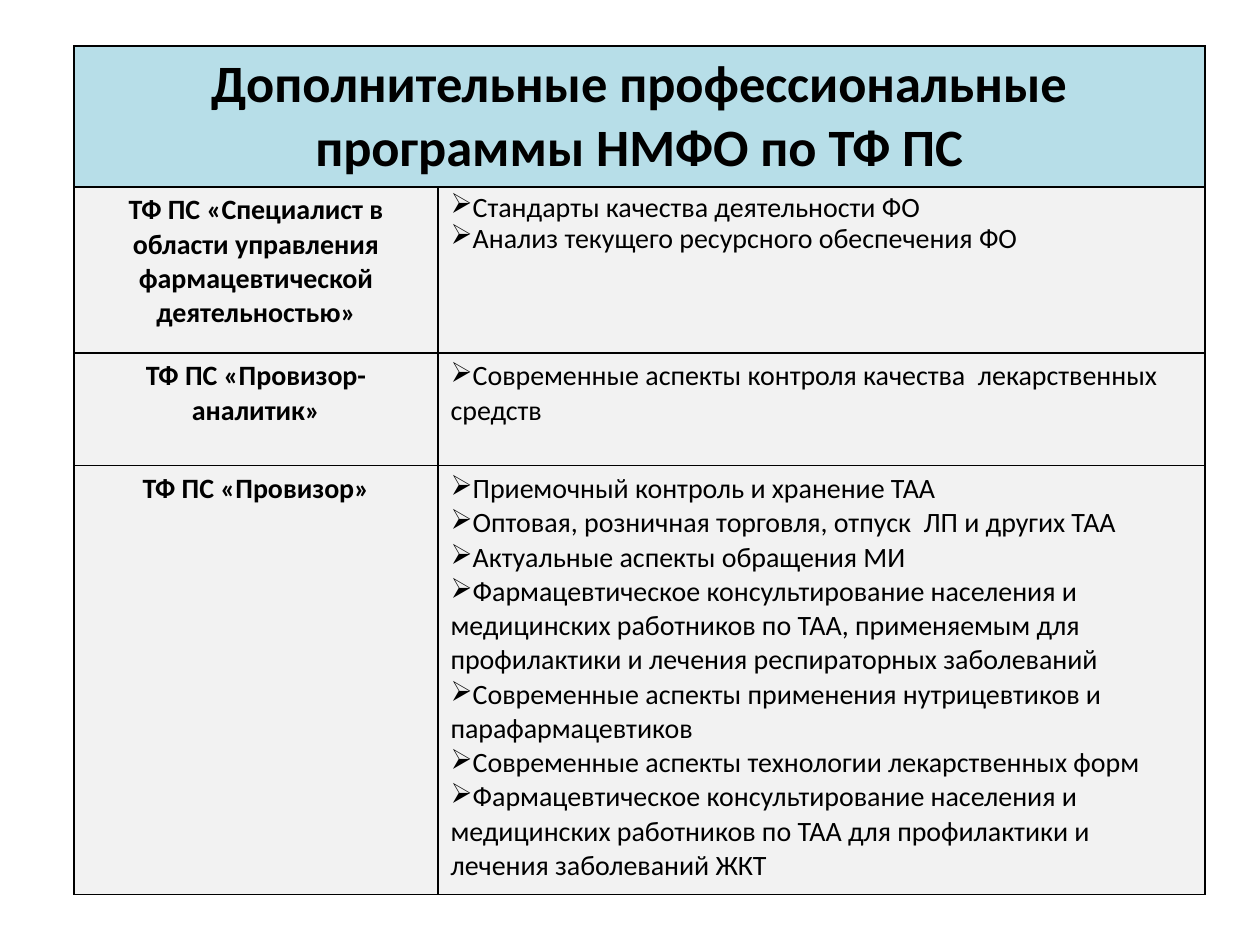
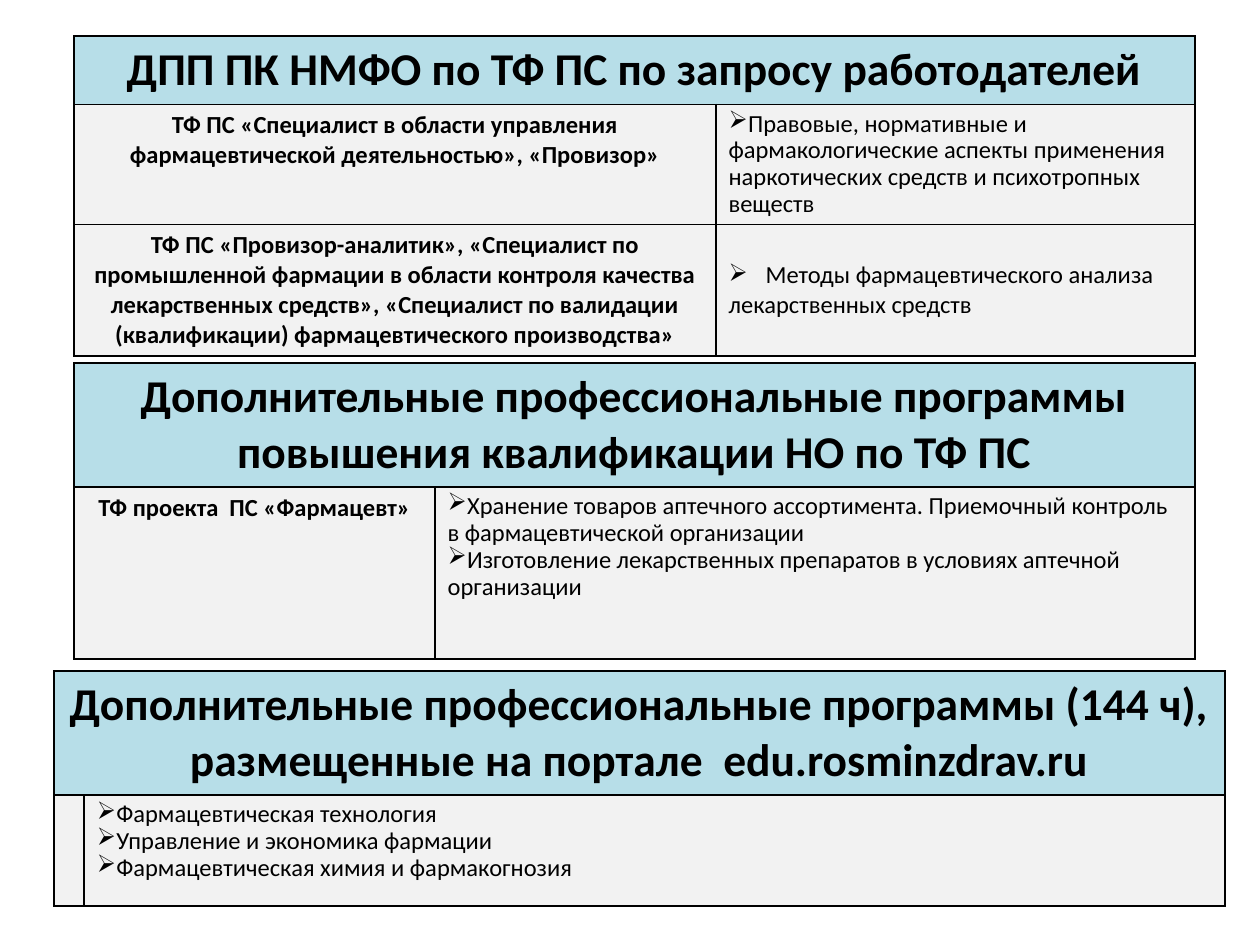
import pptx
import pptx.dml.color
import pptx.enum.text
import pptx.oxml
import pptx.oxml.ns
import pptx.util
from lxml import etree

PX_PER_INCH = 126
FONT = "Calibri"
BLACK, HEADER_BLUE, CELL_GREY = "000000", "B7DEE8", "F2F2F2"
ALIGN = pptx.enum.text.PP_ALIGN
ANCHOR = pptx.enum.text.MSO_ANCHOR


def px(length):
    return pptx.util.Emu(round(length * 914400 / PX_PER_INCH))


def color(hex_string):
    return pptx.dml.color.RGBColor.from_string(hex_string)


def add_xml(parent, tag, **attributes):
    element = etree.SubElement(parent, pptx.oxml.ns.qn(tag))
    for name, value in attributes.items():
        element.set(name, str(value))
    return element


class Deck:
    """Holds the shared table style and the current slide."""

    def __init__(self):
        self.presentation = pptx.Presentation()
        self.presentation.slide_width = px(1260)
        self.presentation.slide_height = px(945)
        self.slide = None

    def new_slide(self):
        layout = self.presentation.slide_layouts[6]
        self.slide = self.presentation.slides.add_slide(layout)

    def programme_table(self, left, top, columns, heights, title, title_size,
                        size, rows):
        table = self.slide.shapes.add_table(
            len(heights), len(columns), px(left), px(top),
            px(sum(columns)), px(sum(heights))).table
        table.first_row = table.horz_banding = False
        for column, width in zip(table.columns, columns):
            column.width = px(width)
        for row, height in zip(table.rows, heights):
            row.height = px(height)

        header = table.cell(0, 0)
        header.merge(table.cell(0, 1))
        for cell in table.rows[0].cells:
            self.frame_cell(cell, HEADER_BLUE)
        self.set_text(header.text_frame.paragraphs[0], title, title_size, True)

        for index, (profession, programmes, spacing, anchor) in enumerate(rows, 1):
            label, details = table.rows[index].cells
            self.frame_cell(label, CELL_GREY)
            self.frame_cell(details, CELL_GREY)
            details.vertical_anchor = anchor
            self.set_text(label.text_frame.paragraphs[0], profession, size, True)
            self.bullets(details.text_frame, programmes, size, spacing)

    def frame_cell(self, cell, fill):
        cell.margin_left = cell.margin_right = pptx.util.Inches(0.1)
        cell.margin_top = cell.margin_bottom = pptx.util.Inches(0.05)
        properties = cell._tc.get_or_add_tcPr()
        for side in ("a:lnL", "a:lnR", "a:lnT", "a:lnB"):
            line = add_xml(properties, side, w=pptx.util.Pt(1))
            solid = add_xml(line, "a:solidFill")
            add_xml(solid, "a:srgbClr", val=BLACK)
        cell.fill.solid()
        cell.fill.fore_color.rgb = color(fill)

    def bullets(self, text_frame, items, size, spacing):
        for index, item in enumerate(items):
            paragraph = (text_frame.add_paragraph() if index
                         else text_frame.paragraphs[0])
            properties = paragraph._p.get_or_add_pPr()
            properties.set("marL", "0")
            properties.set("indent", "0")
            add_xml(properties, "a:buChar", char="➢")
            if item.startswith("\t"):
                tabs = add_xml(properties, "a:tabLst")
                add_xml(tabs, "a:tab", pos=px(37), algn="l")
            self.set_text(paragraph, item, size, False, ALIGN.LEFT)
            paragraph.line_spacing = spacing

    def set_text(self, paragraph, text, size, bold, alignment=ALIGN.CENTER):
        if text:
            paragraph.add_run().text = text
        paragraph.alignment = alignment
        paragraph.font.name = FONT
        paragraph.font.size = pptx.util.Pt(size)
        paragraph.font.bold = bold
        paragraph.font.color.rgb = color(BLACK)


def main():
    deck = Deck()

    deck.new_slide()
    deck.programme_table(
        74, 46, (364, 767), (138, 166, 113, 429),
        "Дополнительные профессиональные программы НМФО по ТФ ПС", 30, 16, [
            ("ТФ ПС «Специалист в области управления фармацевтической деятельностью»",
             ["Стандарты качества деятельности ФО",
              "Анализ текущего ресурсного обеспечения ФО"], 0.9, ANCHOR.TOP),
            ("ТФ ПС «Провизор-аналитик»",
             ["Современные аспекты контроля качества  лекарственных средств"],
             1.0, ANCHOR.TOP),
            ("ТФ ПС «Провизор»",
             ["Приемочный контроль и хранение ТАА",
              "Оптовая, розничная торговля, отпуск  ЛП и других ТАА",
              "Актуальные аспекты обращения МИ",
              "Фармацевтическое консультирование населения и медицинских "
              "работников по ТАА, применяемым для профилактики и лечения "
              "респираторных заболеваний",
              "Современные аспекты применения нутрицевтиков и парафармацевтиков",
              "Современные аспекты технологии лекарственных форм",
              "Фармацевтическое консультирование населения и медицинских "
              "работников по ТАА для профилактики и лечения заболеваний ЖКТ"],
             1.0, ANCHOR.TOP),
        ])

    deck.new_slide()
    deck.programme_table(
        74, 363, (361, 760), (122, 172),
        "Дополнительные профессиональные программы повышения квалификации "
        "НО по ТФ ПС", 26, 14, [
            ("ТФ проекта  ПС «Фармацевт»",
             ["Хранение товаров аптечного ассортимента. Приемочный контроль "
              "в фармацевтической организации",
              "Изготовление лекарственных препаратов в условиях аптечной "
              "организации"], 0.9, ANCHOR.TOP),
        ])
    deck.programme_table(
        54, 671, (30, 1141), (122, 111),
        "Дополнительные профессиональные программы (144 ч), размещенные "
        "на портале  edu.rosminzdrav.ru", 26, 14, [
            ("",
             ["Фармацевтическая технология",
              "Управление и экономика фармации",
              "Фармацевтическая химия и фармакогнозия"], 0.9, ANCHOR.TOP),
        ])
    deck.programme_table(
        74, 36, (642, 479), (67, 118, 131),
        "ДПП ПК НМФО по ТФ ПС по запросу работодателей", 26, 14, [
            ("ТФ ПС «Специалист в области управления фармацевтической "
             "деятельностью», «Провизор»",
             ["Правовые, нормативные и фармакологические аспекты применения "
              "наркотических средств и психотропных веществ"], 0.9, ANCHOR.TOP),
            ("ТФ ПС «Провизор-аналитик», «Специалист по промышленной фармации "
             "в области контроля качества лекарственных средств», «Специалист "
             "по валидации (квалификации) фармацевтического производства»",
             ["\tМетоды фармацевтического анализа лекарственных средств"],
             1.0, ANCHOR.MIDDLE),
        ])

    deck.presentation.save("out.pptx")


if __name__ == "__main__":
    main()
